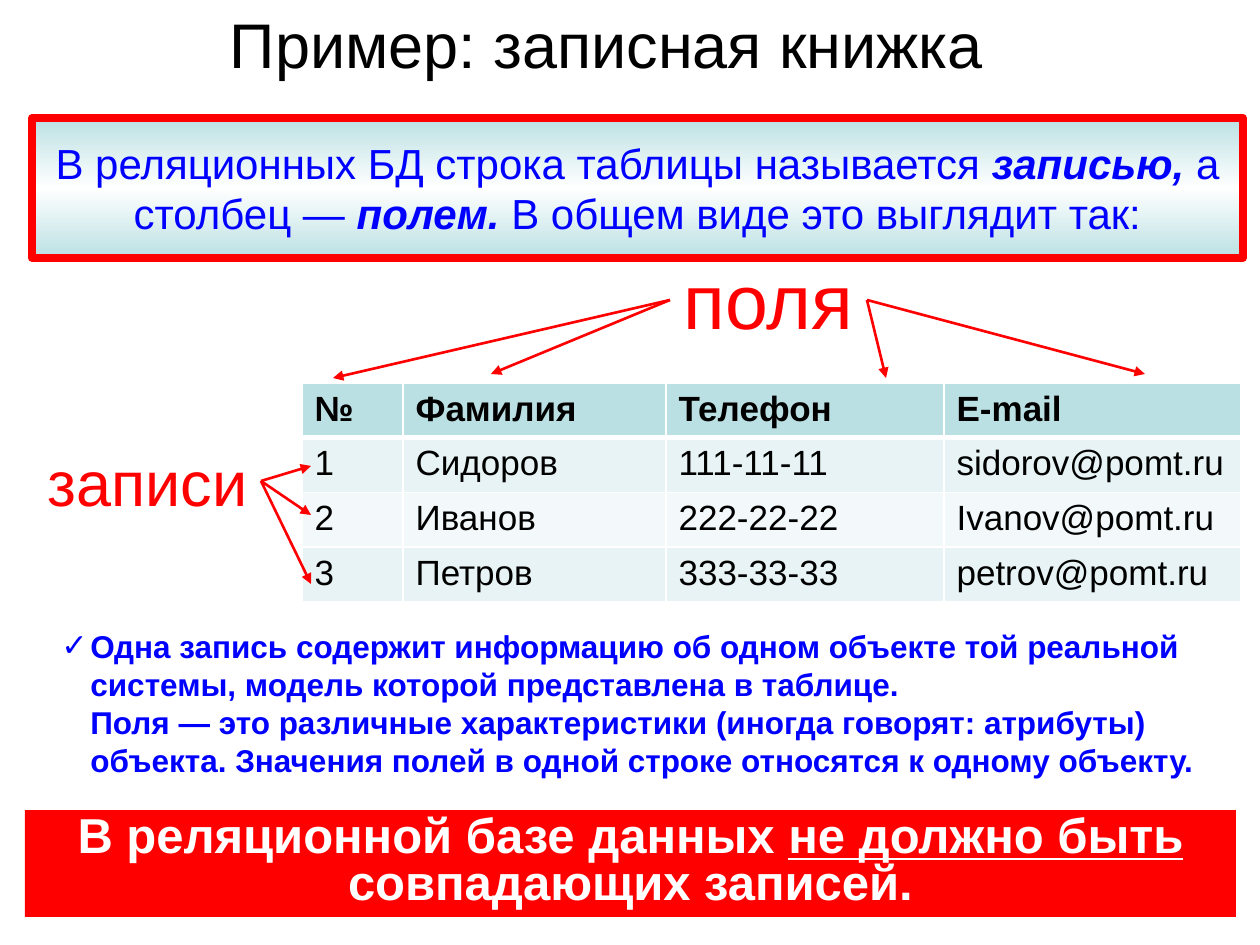
"""Build the slide that explains records and fields with a notebook table."""
from copy import deepcopy

from lxml.etree import SubElement
from pptx import Presentation
from pptx.dml.color import RGBColor
from pptx.enum.shapes import MSO_CONNECTOR, MSO_SHAPE
from pptx.enum.text import MSO_ANCHOR, PP_ALIGN
from pptx.oxml.ns import qn
from pptx.util import Emu, Pt

COLORS = {
    "black": "000000", "white": "FFFFFF", "red": "FF0000", "blue": "0000FF",
    "header": "BBE0E3", "odd": "E7F3F4", "even": "F3F9FA",
}
FONT = "Arial"

TITLE = [("Пример: записная книжка", "")]
DEFINITION = [
    ("В реляционных БД строка таблицы называется ", ""),
    ("записью, ", "bi"),
    ("а столбец — ", ""),
    ("полем. ", "bi"),
    ("В общем виде это выглядит так:", ""),
]
NOTEBOOK = [
    ("№", "Фамилия", "Телефон", "E-mail"),
    ("1", "Сидоров", "111-11-11", "sidorov@pomt.ru"),
    ("2", "Иванов", "222-22-22", "Ivanov@pomt.ru"),
    ("3", "Петров", "333-33-33", "petrov@pomt.ru"),
]
EXPLANATION = [
    ("Одна запись содержит информацию об одном объекте той реальной системы, "
     "модель которой представлена в таблице.", "b"),
    ("\n", ""),
    ("Поля — это различные характеристики (иногда говорят: атрибуты) объекта. "
     "Значения полей в одной строке относятся к одному объекту.", "b"),
]
RULE = [
    ("В реляционной базе данных ", "b"),
    ("не должно быть", "bu"),
    (" совпадающих записей.", "b"),
]
FIELDS, RECORDS = [("поля", "")], [("записи", "")]

COLUMN_WIDTHS = (101, 263, 278, 297)
ROW_HEIGHT = 52
ARROWS = {
    (670, 300): [(333, 378), (491, 374)],
    (867, 300): [(1145, 374), (886, 378)],
    (261, 481): [(311, 466), (311, 515), (311, 584)],
}


def px(length):
    return Emu(round(length * 914400 / 126))


def rgb(name):
    return RGBColor.from_string(COLORS[name])


def write(frame, runs, size, color, align=PP_ALIGN.CENTER, anchor=MSO_ANCHOR.TOP):
    frame.word_wrap = True
    frame.vertical_anchor = anchor
    paragraph = frame.paragraphs[0]
    paragraph.alignment = align
    for words, style in runs:
        if words == "\n":
            paragraph.add_line_break()
            continue
        run = paragraph.add_run()
        run.text = words
        font = run.font
        font.name, font.size, font.color.rgb = FONT, Pt(size), rgb(color)
        font.bold, font.italic, font.underline = (key in style for key in "biu")
    return paragraph


def add_label(slide, box, runs, size, color, **layout):
    label = slide.shapes.add_textbox(*map(px, box))
    return label.text_frame, write(label.text_frame, runs, size, color, **layout)


def add_panel(slide, box):
    panel = slide.shapes.add_shape(MSO_SHAPE.RECTANGLE, *map(px, box))
    panel.shadow.inherit = False
    return panel


def add_arrow(slide, start, end):
    arrow = slide.shapes.add_connector(
        MSO_CONNECTOR.STRAIGHT, *map(px, start), *map(px, end))
    arrow.line.color.rgb = rgb("red")
    arrow.line.width = Pt(1.5)
    SubElement(arrow.line._get_or_add_ln(), qn("a:tailEnd"), type="triangle")
    SubElement(arrow._element.spPr, qn("a:effectLst"))


def add_borders(cell, bottom):
    properties = cell._tc.get_or_add_tcPr()
    for side, width in (("L", 1), ("R", 1), ("T", 1), ("B", bottom)):
        border = SubElement(properties, qn(f"a:ln{side}"), w=str(Pt(width)))
        fill = SubElement(border, qn("a:solidFill"))
        SubElement(fill, qn("a:srgbClr"), val=COLORS["white"])


def add_notebook(slide, left, top):
    table = slide.shapes.add_table(
        len(NOTEBOOK), len(COLUMN_WIDTHS), px(left), px(top),
        px(sum(COLUMN_WIDTHS)), px(ROW_HEIGHT * len(NOTEBOOK))).table
    for column, width in zip(table.columns, COLUMN_WIDTHS):
        column.width = px(width)
    for index, (row, values) in enumerate(zip(table.rows, NOTEBOOK)):
        row.height = px(ROW_HEIGHT)
        header = index == 0
        shade = "header" if header else "odd" if index % 2 else "even"
        for cell, value in zip(row.cells, values):
            add_borders(cell, 3 if header else 1)
            cell.fill.solid()
            cell.fill.fore_color.rgb = rgb(shade)
            write(cell.text_frame, [(value, "b" if header else "")], 20, "black",
                  align=PP_ALIGN.LEFT)


def add_definition(slide, box):
    panel = add_panel(slide, box)
    panel.fill.gradient()
    panel.fill.gradient_angle = 90
    stops = panel._element.spPr.find(".//" + qn("a:gsLst"))
    stops.append(deepcopy(stops[0]))
    for stop, (position, color) in zip(
            panel.fill.gradient_stops, ((0, "header"), (0.5, "white"), (1, "header"))):
        stop.position = position
        stop.color.rgb = rgb(color)
    panel.line.color.rgb = rgb("red")
    panel.line.width = Pt(4.5)
    write(panel.text_frame, DEFINITION, 24, "blue", anchor=MSO_ANCHOR.MIDDLE)


def add_explanation(slide, box):
    paragraph = add_label(slide, box, EXPLANATION, 18, "blue", align=PP_ALIGN.LEFT)[1]
    properties = paragraph._p.get_or_add_pPr()
    properties.set("marL", str(px(29)))
    properties.set("indent", str(-px(29)))
    SubElement(properties, qn("a:buFont"), typeface=FONT)
    SubElement(properties, qn("a:buChar"), char="✓")


def add_rule(slide, box):
    panel = add_panel(slide, box)
    panel.fill.solid()
    panel.fill.fore_color.rgb = rgb("red")
    panel.line.fill.background()
    write(panel.text_frame, RULE, 28, "white").line_spacing = 0.8


def main():
    deck = Presentation()
    deck.slide_width, deck.slide_height = px(1260), px(945)
    slide = deck.slides.add_slide(deck.slide_layouts[6])

    title = add_label(slide, (49, 0, 1134, 86), TITLE, 36, "black",
                      anchor=MSO_ANCHOR.MIDDLE)[0]
    title.margin_right = px(31)
    add_notebook(slide, 302, 383)
    add_definition(slide, (32, 118, 1211, 140))
    add_explanation(slide, (49, 621, 1211, 165))
    fields = add_label(slide, (670, 246, 197, 106), FIELDS, 44, "red")[0]
    fields.word_wrap = False
    add_label(slide, (34, 437, 227, 89), RECORDS, 36, "red")
    for start, ends in ARROWS.items():
        for end in ends:
            add_arrow(slide, start, end)
    add_rule(slide, (25, 810, 1211, 107))

    deck.save("out.pptx")


if __name__ == "__main__":
    main()
